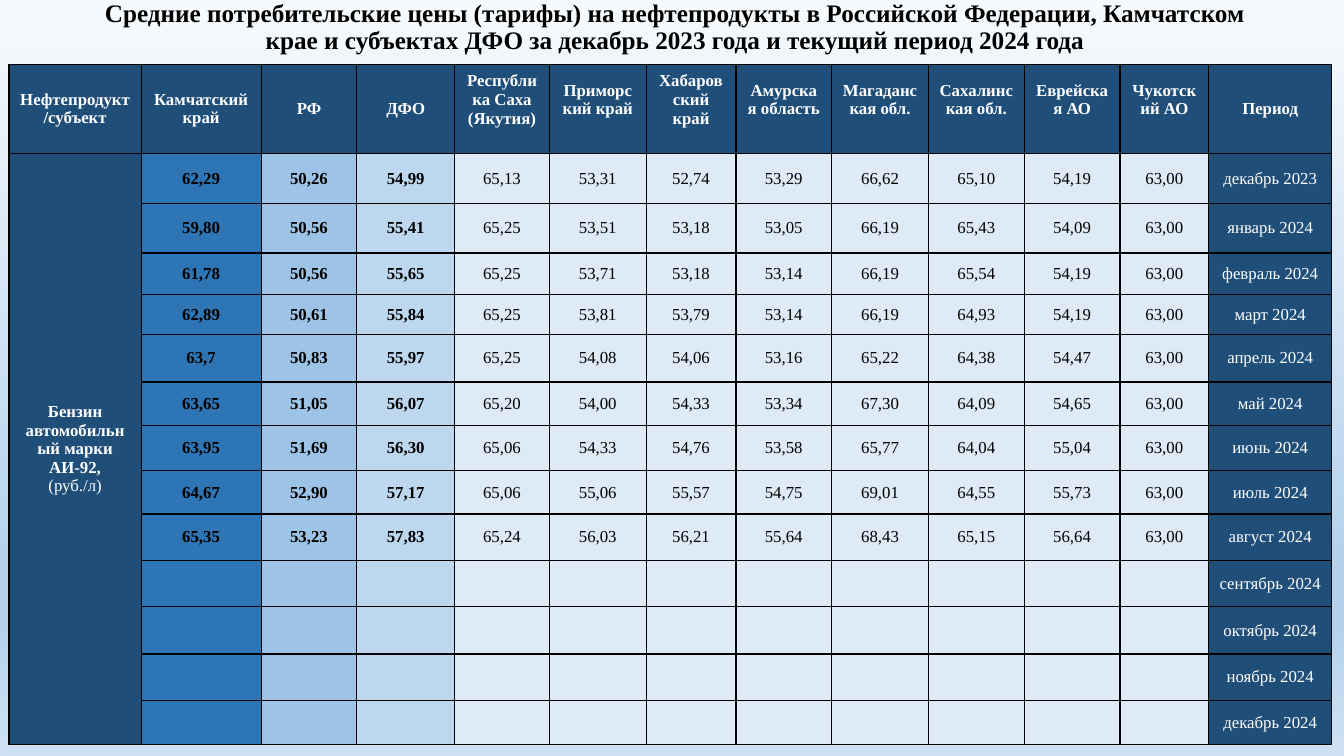
"""Builds a slide with a table of monthly petrol prices by region."""
import pptx
import pptx.dml.color
import pptx.enum.text
import pptx.oxml.ns
import pptx.util
from lxml import etree

Inches, Pt = pptx.util.Inches, pptx.util.Pt
RGBColor = pptx.dml.color.RGBColor
qn = pptx.oxml.ns.qn
CENTER = pptx.enum.text.PP_ALIGN.CENTER
MIDDLE = pptx.enum.text.MSO_ANCHOR.MIDDLE

FONT = "Times New Roman"
BLACK = RGBColor(0x00, 0x00, 0x00)
WHITE = RGBColor(0xFF, 0xFF, 0xFF)
NAVY = RGBColor(0x1F, 0x4E, 0x79)
BLUE = RGBColor(0x2E, 0x75, 0xB6)
SKY = RGBColor(0x9D, 0xC3, 0xE6)
LIGHT = RGBColor(0xBD, 0xD7, 0xEE)
PALE = RGBColor(0xDE, 0xEB, 0xF7)
BACKGROUND = [(0, RGBColor(0xF7, 0xFA, 0xFD)), (74, RGBColor(0xB5, 0xD2, 0xEC)),
              (83, RGBColor(0xB5, 0xD2, 0xEC)), (100, RGBColor(0xCE, 0xE1, 0xF2))]

TITLE = ("Средние потребительские цены (тарифы) на нефтепродукты в Российской Федерации, "
         "Камчатском крае и субъектах ДФО за декабрь 2023 года и текущий период 2024 года")
HEADERS = ["Нефтепродукт/субъект", "Камчатский край", "РФ", "ДФО",
           "Республика Саха (Якутия)", "Приморский край", "Хабаровский край",
           "Амурская область", "Магаданская обл.", "Сахалинская обл.",
           "Еврейская АО", "Чукотский АО", "Период"]
PRODUCT = [("Бензин автомобильный марки", True), ("АИ-92,", True), ("(руб./л)", False)]
PRICES = [
    ("декабрь 2023", "62,29 50,26 54,99 65,13 53,31 52,74 53,29 66,62 65,10 54,19 63,00"),
    ("январь 2024", "59,80 50,56 55,41 65,25 53,51 53,18 53,05 66,19 65,43 54,09 63,00"),
    ("февраль 2024", "61,78 50,56 55,65 65,25 53,71 53,18 53,14 66,19 65,54 54,19 63,00"),
    ("март 2024", "62,89 50,61 55,84 65,25 53,81 53,79 53,14 66,19 64,93 54,19 63,00"),
    ("апрель 2024", "63,7 50,83 55,97 65,25 54,08 54,06 53,16 65,22 64,38 54,47 63,00"),
    ("май 2024", "63,65 51,05 56,07 65,20 54,00 54,33 53,34 67,30 64,09 54,65 63,00"),
    ("июнь 2024", "63,95 51,69 56,30 65,06 54,33 54,76 53,58 65,77 64,04 55,04 63,00"),
    ("июль 2024", "64,67 52,90 57,17 65,06 55,06 55,57 54,75 69,01 64,55 55,73 63,00"),
    ("август 2024", "65,35 53,23 57,83 65,24 56,03 56,21 55,64 68,43 65,15 56,64 63,00"),
    ("сентябрь 2024", ""),
    ("октябрь 2024", ""),
    ("ноябрь 2024", ""),
    ("декабрь 2024", ""),
]
COL_WIDTHS = [1.31, 1.19, 0.95, 0.97, 0.94, 0.96, 0.89, 0.95, 0.96, 0.95, 0.95, 0.88, 1.22]
ROW_HEIGHTS = [0.84, 0.5, 0.49, 0.41, 0.4, 0.47, 0.43, 0.45, 0.43, 0.46, 0.46, 0.47, 0.46, 0.44]
COL_FILLS = [NAVY, BLUE, SKY, LIGHT] + [PALE] * 8 + [NAVY]
LAST = len(HEADERS) - 1


def write(tf, lines, size, color):
    for i, (text, bold) in enumerate(lines):
        p = tf.paragraphs[0] if i == 0 else tf.add_paragraph()
        p.alignment = CENTER
        r = p.add_run()
        r.text = text
        r.font.name, r.font.size, r.font.bold = FONT, Pt(size), bold
        r.font.color.rgb = color


def add_solid(parent, color):
    fill = etree.SubElement(parent, qn("a:solidFill"))
    etree.SubElement(fill, qn("a:srgbClr"), val=str(color))


def style_cell(cell, color):
    tcPr = cell._tc.get_or_add_tcPr()
    for side in ("a:lnL", "a:lnR", "a:lnT", "a:lnB"):
        add_solid(etree.SubElement(tcPr, qn(side), w=str(Pt(1))), BLACK)
    cell.fill.solid()
    cell.fill.fore_color.rgb = color
    cell.vertical_anchor = MIDDLE


def set_background(s):
    fill = s.background.fill
    fill.gradient()
    fill.gradient_angle = 270
    stops = s.element.find(".//" + qn("a:gsLst"))
    for stop in list(stops):
        stops.remove(stop)
    for percent, color in BACKGROUND:
        stop = etree.SubElement(stops, qn("a:gs"), pos=str(percent * 1000))
        etree.SubElement(stop, qn("a:srgbClr"), val=str(color))


def add_title(s):
    tf = s.shapes.add_textbox(Inches(0.92), 0, Inches(11.55), Inches(0.55)).text_frame
    tf.word_wrap = True
    tf.margin_top = tf.margin_bottom = 0
    tf.vertical_anchor = MIDDLE
    write(tf, [(TITLE, True)], 18, BLACK)
    tf.paragraphs[0].line_spacing = 0.9


def add_prices(s):
    table = s.shapes.add_table(len(ROW_HEIGHTS), len(COL_WIDTHS), Inches(0.09), Inches(0.64),
                               Inches(sum(COL_WIDTHS)), Inches(sum(ROW_HEIGHTS))).table
    table.first_row = table.horz_banding = False
    for col, width in zip(table.columns, COL_WIDTHS):
        col.width = Inches(width)
    for row, height in zip(table.rows, ROW_HEIGHTS):
        row.height = Inches(height)

    for c, header in enumerate(HEADERS):
        cell = table.cell(0, c)
        style_cell(cell, NAVY)
        write(cell.text_frame, [(header, True)], 12, WHITE)
        if 4 <= c < LAST:
            cell.margin_bottom = Inches(0.23)

    for r, (month, prices) in enumerate(PRICES, start=1):
        for c, color in enumerate(COL_FILLS):
            style_cell(table.cell(r, c), color)
        for c, price in enumerate(prices.split(), start=1):
            write(table.cell(r, c).text_frame, [(price, c <= 3)], 12, BLACK)
        write(table.cell(r, LAST).text_frame, [(month, False)], 12, WHITE)

    product = table.cell(1, 0)
    product.merge(table.cell(len(PRICES), 0))
    write(product.text_frame, PRODUCT, 12, WHITE)


def main():
    prs = pptx.Presentation()
    prs.slide_width, prs.slide_height = Inches(13.33), Inches(7.5)
    s = prs.slides.add_slide(prs.slide_layouts[6])
    set_background(s)
    add_title(s)
    add_prices(s)
    prs.save("out.pptx")


if __name__ == "__main__":
    main()
